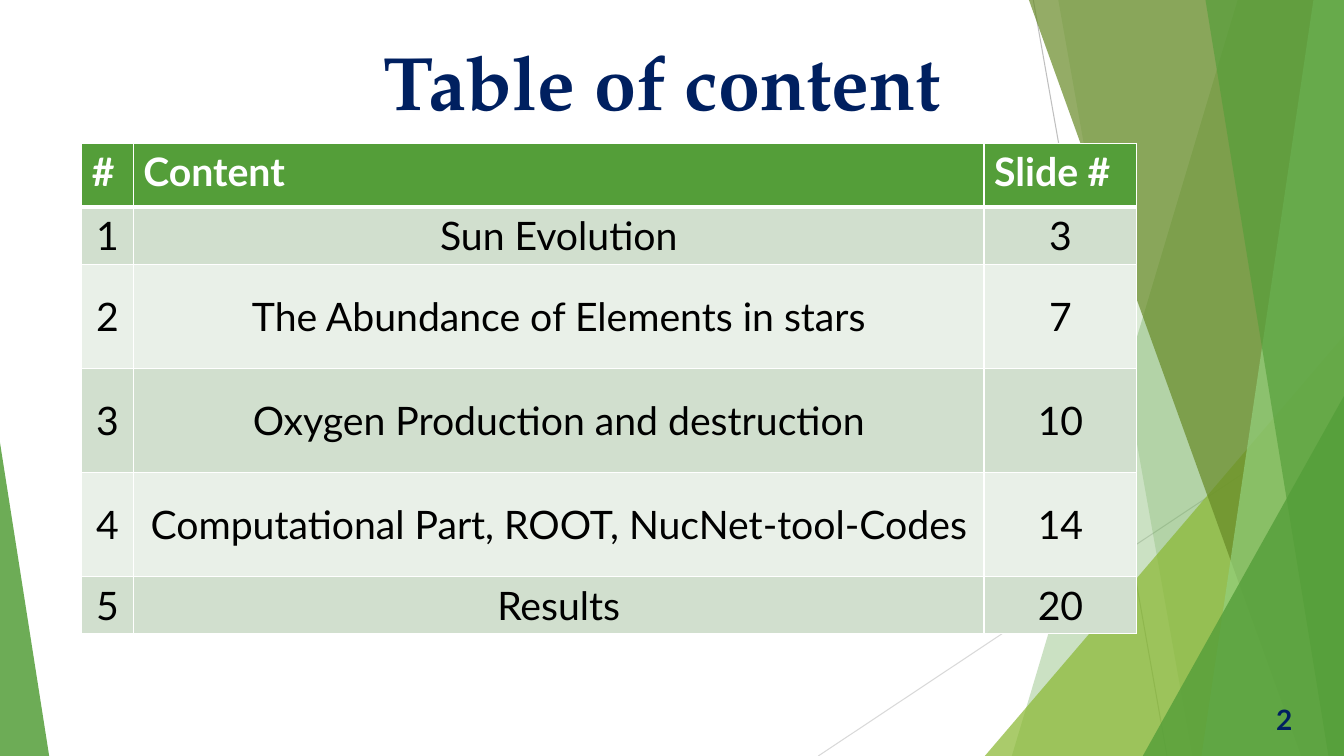
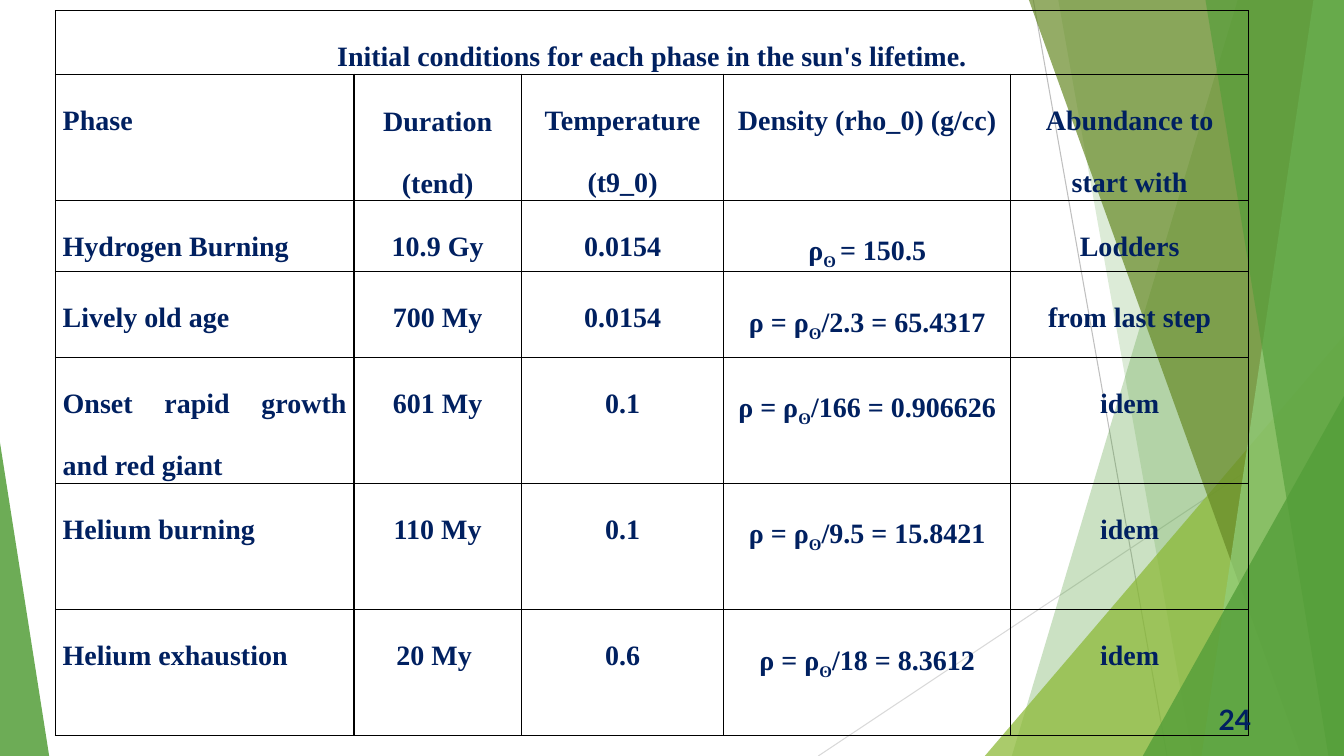
from lxml.etree import SubElement
from pptx import Presentation
from pptx.dml.color import RGBColor
from pptx.enum.shapes import MSO_CONNECTOR, MSO_SHAPE
from pptx.enum.text import MSO_ANCHOR as Anchor, MSO_AUTO_SIZE, PP_ALIGN as Align
from pptx.oxml import parse_xml
from pptx.oxml.ns import nsdecls, qn
from pptx.util import Cm, Pt

WIDTH, HEIGHT = 33.87, 19.05  # slide size in cm
TITLE_ONLY, BLANK = 5, 6  # layout positions

COLORS = {
    "navy": "002060", "white": "FFFFFF", "black": "000000",
    "green": "549E39", "lime": "8AB833", "olive": "678A26", "mint": "93D07D",
    "row_dark": "D1DFCE", "row_light": "E9F0E8",
    "line_dark": "BFBFBF", "line_light": "D9D9D9",
}

# Backdrop lines: x1, y1, x2, y2, colour
LINES = [
    (26.04, 0, 29.41, HEIGHT, "line_dark"),
    (WIDTH, 10.24, 20.62, HEIGHT, "line_light"),
]
# Backdrop facets, back to front.
# band: x at the top, x at the bottom; triangle: left, top, width, apex
FACETS = [
    ("band", (31.19, 25.5), "green", 30),
    ("band", (26.67, 30.05), "green", 20),
    ("triangle", (24.82, 8.46, 9.05, 1), "lime", 72),
    ("band", (25.93, 32.79), "olive", 70),
    ("band", (33.1, 30.28), "mint", 70),
    ("band", (30.38, 33.48), "green", 65),
    ("triangle", (28.8, 9.98, 5.07, 1), "green", 80),
    ("triangle", (0, 11.15, 1.24, 0), "green", 85),
]

CONTENTS = [
    ("#", "Content", "Slide #"),
    ("1", "Sun Evolution", "3"),
    ("2", "The Abundance of Elements in stars", "7"),
    ("3", "Oxygen Production and destruction", "10"),
    ("4", "Computational Part, ROOT, NucNet-tool-Codes", "14"),
    ("5", "Results", "20"),
]

# A tuple holds runs: normal, subscript, normal
PHASES = [
    ("Initial conditions for each phase in the sun's lifetime.", "", "", "", ""),
    ("Phase", "Duration (tend)", "Temperature (t9_0)", "Density (rho_0) (g/cc)",
     "Abundance to start with"),
    ("Hydrogen Burning", "10.9 Gy", "0.0154", ("ρ", "ʘ ", "= 150.5"), "Lodders"),
    ("Lively old age", "700 My", "0.0154", ("ρ = ρ", "ʘ", "/2.3 = 65.4317"),
     "from last step"),
    ("Onset rapid growth and red giant", "601 My", "0.1",
     ("ρ = ρ", "ʘ", "/166 = 0.906626"), "idem"),
    ("Helium burning ", "110 My", "0.1", ("ρ = ρ", "ʘ", "/9.5 = 15.8421"), "idem"),
    ("Helium exhaustion ", "20 My ", "0.6", ("ρ = ρ", "ʘ", "/18 = 8.3612"), "idem"),
]


def rgb(color):
    return RGBColor.from_string(COLORS[color])


class Deck:
    def __init__(self):
        self.presentation = Presentation()
        self.presentation.slide_width = Cm(WIDTH)
        self.presentation.slide_height = Cm(HEIGHT)
        self.slide = None

    def new_slide(self, layout):
        layouts = self.presentation.slide_layouts
        self.slide = self.presentation.slides.add_slide(layouts[layout])
        self.backdrop()

    # Backdrop
    def backdrop(self):
        for x1, y1, x2, y2, color in LINES:
            self.line(x1, y1, x2, y2, color)
        for kind, place, color, opacity in FACETS:
            draw = self.band if kind == "band" else self.triangle
            self.paint(draw(*place), color, opacity)

    def line(self, x1, y1, x2, y2, color):
        connector = self.slide.shapes.add_connector(
            MSO_CONNECTOR.STRAIGHT, Cm(x1), Cm(y1), Cm(x2), Cm(y2))
        connector.line.color.rgb = rgb(color)
        connector.line.width = Pt(0.75)
        SubElement(connector._element.spPr, qn("a:effectLst"))

    def band(self, top_x, bottom_x):
        """Outline from a slanted left edge to the right edge of the slide."""
        builder = self.slide.shapes.build_freeform(Cm(top_x), 0)
        builder.add_line_segments([
            (Cm(WIDTH), 0), (Cm(WIDTH), Cm(HEIGHT)), (Cm(bottom_x), Cm(HEIGHT))])
        return builder.convert_to_shape()

    def triangle(self, left, top, width, apex):
        """Triangle standing on the bottom edge of the slide."""
        shape = self.slide.shapes.add_shape(
            MSO_SHAPE.ISOSCELES_TRIANGLE,
            Cm(left), Cm(top), Cm(width), Cm(HEIGHT - top))
        shape.adjustments[0] = apex
        return shape

    def paint(self, shape, color, opacity):
        shape.shadow.inherit = False
        shape.line.fill.background()
        shape.fill.solid()
        shape.fill.fore_color.rgb = rgb(color)
        fill_color = shape._element.spPr.find(qn("a:solidFill")).find(qn("a:srgbClr"))
        SubElement(fill_color, qn("a:alpha"), val=str(opacity * 1000))

    # Text
    def add_text(self, paragraph, text, size, font="Lato", color="navy", bold=True):
        """Add the runs of one paragraph; every second run is a subscript."""
        parts = (text,) if isinstance(text, str) else text
        for index, part in enumerate(parts):
            run = paragraph.add_run()
            run.text = part
            run.font.size = Pt(size)
            run.font.name = font
            run.font.bold = bold
            run.font.color.rgb = rgb(color)
            if index % 2:
                run._r.get_or_add_rPr().set("baseline", "-25000")

    def title(self, text):
        shape = self.slide.shapes.title
        shape.left, shape.top = Cm(4.75), Cm(0.76)
        shape.width, shape.height = Cm(23.88), Cm(2.57)
        frame = shape.text_frame
        frame.auto_size = MSO_AUTO_SIZE.SHAPE_TO_FIT_TEXT
        frame.vertical_anchor = Anchor.TOP
        paragraph = frame.paragraphs[0]
        paragraph.alignment = Align.CENTER
        self.add_text(paragraph, text, 54, "TeX Gyre Pagella")

    def number(self, text, left):
        box = self.slide.shapes.add_textbox(Cm(left), Cm(17.63), Cm(1.5), Cm(0.99))
        frame = box.text_frame
        frame.word_wrap = True
        frame.vertical_anchor = Anchor.MIDDLE
        paragraph = frame.paragraphs[0]
        paragraph.alignment = Align.RIGHT
        self.add_text(paragraph, text, 20)

    # Tables
    def table(self, left, top, widths, heights):
        table = self.slide.shapes.add_table(
            len(heights), len(widths), Cm(left), Cm(top),
            Cm(sum(widths)), Cm(sum(heights))).table
        table.first_row = table.horz_banding = False
        for column, width in zip(table.columns, widths):
            column.width = Cm(width)
        for row, height in zip(table.rows, heights):
            row.height = Cm(height)
        return table

    def fill_cell(self, cell, color=None):
        if color:
            cell.fill.solid()
            cell.fill.fore_color.rgb = rgb(color)
        else:
            cell.fill.background()

    def borders(self, cell, color, top=1, bottom=1):
        properties = cell._tc.get_or_add_tcPr()
        sides = [("lnL", 1), ("lnR", 1), ("lnT", top), ("lnB", bottom)]
        for index, (side, width) in enumerate(sides):
            properties.insert(index, parse_xml(
                f'<a:{side} {nsdecls("a")} w="{Pt(width)}"><a:solidFill>'
                f'<a:srgbClr val="{COLORS[color]}"/></a:solidFill></a:{side}>'))

    def contents_table(self, rows):
        table = self.table(2.06, 3.61, [1.3, 21.44, 3.85],
                           [1.6, 1.45, 2.62, 2.62, 2.62, 1.45])
        for r, row in enumerate(rows):
            header = r == 0
            for c, text in enumerate(row):
                cell = table.cell(r, c)
                paragraph = cell.text_frame.paragraphs[0]
                if header:
                    self.fill_cell(cell, "green")
                else:
                    self.fill_cell(cell, "row_dark" if r % 2 else "row_light")
                    cell.vertical_anchor = Anchor.MIDDLE
                    paragraph.alignment = Align.CENTER
                self.borders(cell, "white", top=3 if r == 1 else 1,
                             bottom=3 if header else 1)
                self.add_text(paragraph, text, 28, bold=header,
                              color="white" if header else "black")

    def phases_table(self, rows):
        table = self.table(1.4, 0.27, [7.52, 4.22, 5.1, 7.23, 6],
                           [1.6, 3.18, 1.6, 2.16, 3.18, 3.18, 3.18])
        table.cell(0, 0).merge(table.cell(0, 4))
        for r, row in enumerate(rows):
            for c, text in enumerate(row):
                cell = table.cell(r, c)
                self.fill_cell(cell)
                self.borders(cell, "black")
                if cell.is_spanned:
                    continue
                cell.margin_left = cell.margin_right = Cm(0.18)
                cell.margin_top = cell.margin_bottom = 0
                paragraph = cell.text_frame.paragraphs[0]
                paragraph.alignment = Align.JUSTIFY if r and c == 0 else Align.CENTER
                paragraph.line_spacing = 2.0
                paragraph.space_before = Pt(12)
                self.add_text(paragraph, text, 20, "Times New Roman")
        table.cell(1, 1).vertical_anchor = Anchor.MIDDLE


def main():
    deck = Deck()

    # Table of content
    deck.new_slide(TITLE_ONLY)
    deck.title("Table of content")
    deck.contents_table(CONTENTS)
    deck.number("2", 31.32)

    # Initial conditions
    deck.new_slide(BLANK)
    deck.phases_table(PHASES)
    deck.number("24", 30.28)

    deck.presentation.save("out.pptx")


if __name__ == "__main__":
    main()
